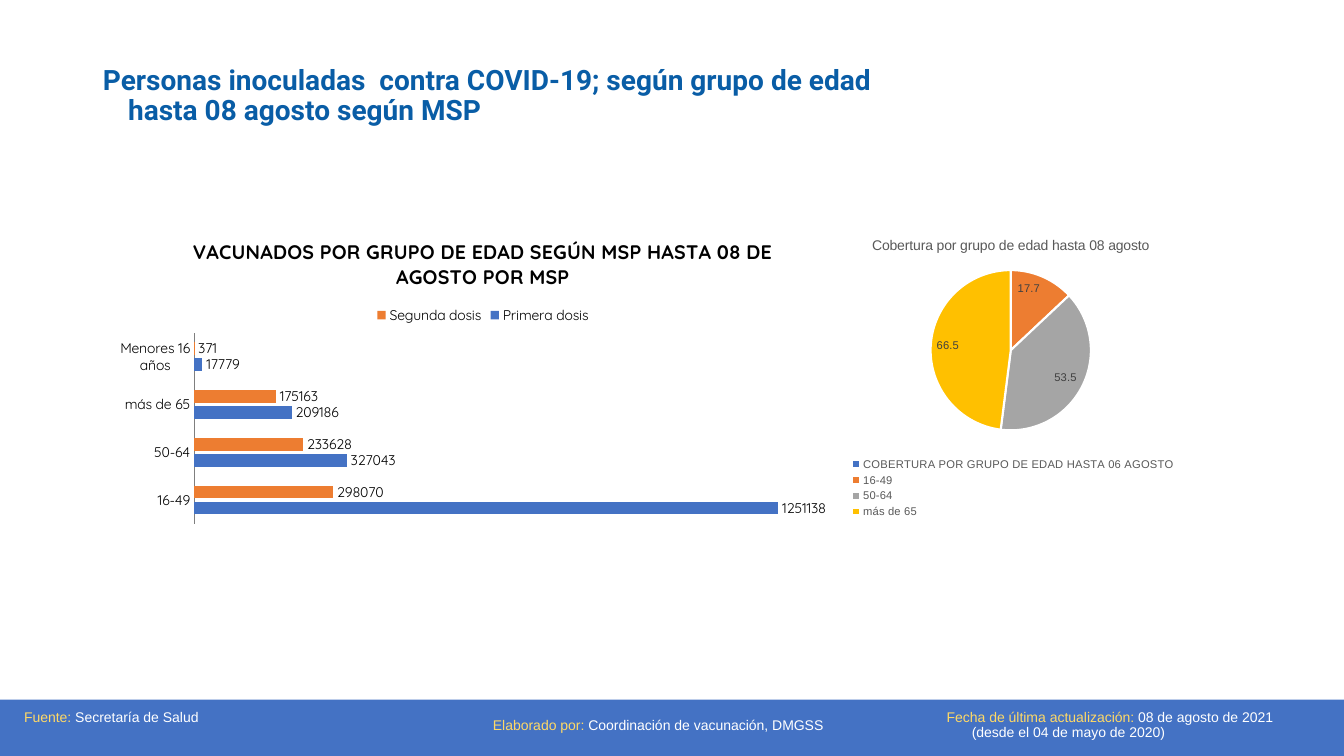
from pptx import Presentation, util as u
from pptx.chart.data import CategoryChartData
from pptx.dml.color import RGBColor
from pptx.enum import chart as charts, shapes, text
from pptx.oxml import parse_xml
from pptx.oxml.ns import nsdecls

COLORS = {
    "blue": "4472C4", "orange": "ED7D31", "gray": "A5A5A5", "gold": "FFC000",
    "title": "095DA6", "caption": "FFD966", "white": "FFFFFF", "black": "000000",
    "muted": "595959", "label": "404040", "axis": "7F7F7F",
}


def rgb(name):
    return RGBColor.from_string(COLORS[name])


def apply(target, values):
    for name, value in values.items():
        setattr(target, name, value)


class SlideBuilder:
    def __init__(self, presentation):
        self.slide = presentation.slides.add_slide(presentation.slide_layouts[5])

    def font(self, font, name, size, color, bold=False):
        apply(font, {"name": name, "size": u.Pt(size), "bold": bold})
        font.color.rgb = rgb(color)

    def place(self, shape, box):
        apply(shape, dict(zip(("left", "top", "width", "height"), map(u.Inches, box))))

    def fill_text(self, shape, runs, font_name, size, anchor, bold=False):
        frame = shape.text_frame
        apply(frame, {"word_wrap": True, "auto_size": text.MSO_AUTO_SIZE.NONE,
                      "vertical_anchor": anchor})
        paragraph = frame.paragraphs[0]
        apply(paragraph, {"alignment": text.PP_ALIGN.LEFT, "line_spacing": 0.9,
                          "space_before": u.Pt(10)})
        properties = paragraph._p.get_or_add_pPr()
        properties.set("marL", str(u.Inches(0.25)))
        properties.set("indent", str(u.Inches(-0.25)))
        for content, color in runs:
            run = paragraph.add_run()
            run.text = content
            self.font(run.font, font_name, size, color, bold)

    def title(self, box, content):
        shape = self.slide.shapes.title
        self.place(shape, box)
        self.fill_text(shape, [(content, "title")], "Roboto", 20, text.MSO_ANCHOR.TOP, True)

    def band(self, box, color):
        shape = self.slide.shapes.add_shape(
            shapes.MSO_SHAPE.RECTANGLE, *map(u.Inches, box))
        shape.shadow.inherit = False
        shape.fill.solid()
        shape.fill.fore_color.rgb = rgb(color)
        shape.line.fill.background()

    def footnote(self, box, caption, detail, anchor):
        shape = self.slide.shapes.add_textbox(*map(u.Inches, box))
        self.fill_text(shape, [(caption, "caption"), (detail, "white")], "Arial", 10, anchor)

    def layout(self, box, inner=False):
        target = '<c:layoutTarget val="inner"/>' if inner else ""
        modes = '<c:xMode val="edge"/><c:yMode val="edge"/>'
        sizes = "".join(f'<c:{key} val="{value}"/>' for key, value in zip("xywh", box))
        return parse_xml(f'<c:layout {nsdecls("c")}><c:manualLayout>{target}{modes}{sizes}'
                         '</c:manualLayout></c:layout>')

    def chart(self, kind, box, categories, series, title, title_style, style,
              legend_position, plot_box):
        data = CategoryChartData()
        data.categories = categories
        for name, values in series:
            data.add_series(name, values)
        chart = self.slide.shapes.add_chart(kind, *map(u.Inches, box), data).chart
        self.font(chart.font, *style)
        chart.has_title = True
        frame = chart.chart_title.text_frame
        frame.text = title
        self.font(frame.paragraphs[0].runs[0].font, *title_style)
        chart.has_legend = True
        apply(chart.legend, {"position": legend_position, "include_in_layout": False})
        self.font(chart.legend.font, *style)
        plot_area = chart.element.xpath("c:chart/c:plotArea")[0]
        for old_layout in plot_area.xpath("c:layout"):
            plot_area.remove(old_layout)
        plot_area.insert(0, self.layout(plot_box, True))
        return chart

    def bar_chart(self, box, categories, series, title, colors):
        style = ("Quicksand", 10, "black")
        chart = self.chart(
            charts.XL_CHART_TYPE.BAR_CLUSTERED, box, categories, series, title,
            ("Quicksand", 14, "black", True), style,
            charts.XL_LEGEND_POSITION.TOP, (0.12, 0.36, 0.86, 0.62))
        apply(chart.value_axis, {"visible": False, "has_major_gridlines": False,
                                 "minimum_scale": 0, "maximum_scale": 1400000})
        axis = chart.category_axis
        apply(axis, {"major_tick_mark": charts.XL_TICK_MARK.NONE,
                     "has_major_gridlines": False})
        axis.format.line.color.rgb = rgb("axis")
        plot = chart.plots[0]
        apply(plot, {"gap_width": 150, "overlap": -25, "vary_by_categories": False})
        for bars, color in zip(plot.series, colors):
            bars.format.fill.solid()
            bars.format.fill.fore_color.rgb = rgb(color)
            labels = bars.data_labels
            apply(labels, {"show_value": True,
                           "position": charts.XL_LABEL_POSITION.OUTSIDE_END})
            self.font(labels.font, *style)

    def pie_chart(self, box, categories, series, title, colors, point_labels):
        chart = self.chart(
            charts.XL_CHART_TYPE.PIE, box, categories, series, title,
            ("Arial", 10, "muted"), ("Arial", 8, "muted"),
            charts.XL_LEGEND_POSITION.BOTTOM, (0.35, 0.16, 0.3, 0.53))
        legend = chart.element.xpath("c:chart/c:legend")[0]
        legend.xpath("c:legendPos")[0].addnext(self.layout((0.2, 0.77, 0.61, 0.22)))
        plot = chart.plots[0]
        plot.vary_by_categories = True
        pie = plot.series[0]
        label_style = ("Arial", 8, "label")
        inside_end = charts.XL_LABEL_POSITION.INSIDE_END
        labels = pie.data_labels
        apply(labels, {"show_percentage": True, "show_value": False,
                       "number_format": "0.0", "number_format_is_linked": False,
                       "position": inside_end})
        self.font(labels.font, *label_style)
        for index, color in enumerate(colors):
            point = pie.points[index]
            point.format.fill.solid()
            point.format.fill.fore_color.rgb = rgb(color)
            point.format.line.color.rgb = rgb("white")
            point.format.line.width = u.Pt(1.5)
            if index in point_labels:
                label = point.data_label
                label.text_frame.text = point_labels[index]
                self.font(label.text_frame.paragraphs[0].runs[0].font, *label_style)
                label.position = inside_end


def main():
    presentation = Presentation()
    apply(presentation, {"slide_width": u.Inches(13.33), "slide_height": u.Inches(7.5)})
    builder = SlideBuilder(presentation)
    builder.band((0, 6.94, 13.33, 0.56), "blue")
    builder.title((0.92, 0.61, 8.46, 0.57),
                  "Personas inoculadas  contra COVID-19; según grupo de edad "
                  "hasta 08 agosto según MSP")
    middle, top = text.MSO_ANCHOR.MIDDLE, text.MSO_ANCHOR.TOP
    for left, width, caption, detail, anchor in (
        (9.29, 3.89, "Fecha de última actualización: ",
         "08 de agosto de 2021  (desde el 04 de mayo de 2020)", middle),
        (4.79, 4.32, "Elaborado por: ", "Coordinación de vacunación, DMGSS", middle),
        (0.14, 4.32, "Fuente: ", "Secretaría de Salud", top),
    ):
        builder.footnote((left, 7, width, 0.4), caption, detail, anchor)
    ages = ["16-49", "50-64", "más de 65"]
    builder.bar_chart(
        (1.02, 2.2, 7.54, 3.06), ages + ["Menores 16 años"],
        [("Primera dosis", (1251138, 327043, 209186, 17779)),
         ("Segunda dosis", (298070, 233628, 175163, 371))],
        "VACUNADOS POR GRUPO DE EDAD SEGÚN MSP HASTA 08 DE AGOSTO POR MSP",
        ("blue", "orange"))
    builder.pie_chart(
        (7.3, 2.2, 5.45, 3), ["COBERTURA POR GRUPO DE EDAD HASTA 06 AGOSTO"] + ages,
        [("Series 1", (None, 13, 39, 48))],
        "Cobertura por grupo de edad hasta 08 agosto",
        ("blue", "orange", "gray", "gold"), {1: "17.7", 2: "53.5", 3: "66.5"})
    presentation.save("out.pptx")


if __name__ == "__main__":
    main()
